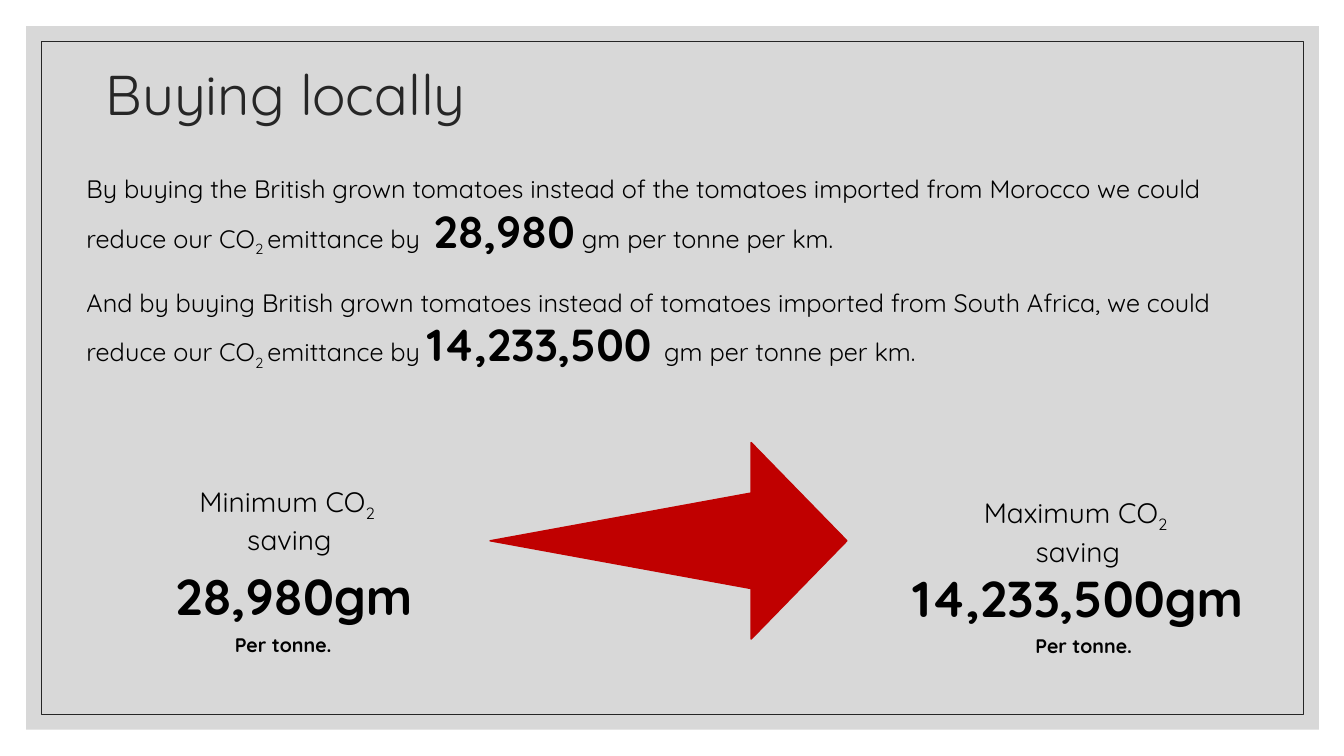
from lxml import etree
from pptx import Presentation
from pptx.dml.color import RGBColor
from pptx.enum.shapes import MSO_SHAPE as SHAPE
from pptx.enum.text import MSO_ANCHOR as ANCHOR, MSO_AUTO_SIZE as AUTO, PP_ALIGN as ALIGN
from pptx.oxml.ns import qn
from pptx.util import Pt

PX = 9144  # 100 px to the inch
FONT = "Quicksand"
GREY = RGBColor(0xBF, 0xBF, 0xBF)
DARK = RGBColor(0x26, 0x26, 0x26)
BLACK = RGBColor(0, 0, 0)
RED = RGBColor(0xC0, 0, 0)


def box(*lengths):
    return [n * PX for n in lengths]


def add_run(p, text, size, bold=False, sub=False, color=BLACK):
    r = p.add_run()
    r.text = text
    r.font.name = FONT
    r.font.size = Pt(size)
    r.font.bold = bold
    r.font.color.rgb = color
    if sub:
        r.font._element.set("baseline", "-25000")


def add_text(slide, place, paragraphs, align=ALIGN.LEFT, gap=0):
    """Each paragraph is a list of runs: text, size, bold, subscript."""
    tf = slide.shapes.add_textbox(*box(*place)).text_frame
    tf.word_wrap = True
    tf.auto_size = AUTO.SHAPE_TO_FIT_TEXT
    for i, runs in enumerate(paragraphs):
        p = tf.add_paragraph() if i else tf.paragraphs[0]
        p.alignment = align
        if i:
            p.space_before = Pt(gap)
        for run in runs:
            add_run(p, *run)


def add_shape(slide, kind, place, fill=None, line=None, width=1, rotation=0):
    s = slide.shapes.add_shape(kind, *box(*place))
    s.shadow.inherit = False
    s.rotation = rotation
    if fill is None:
        s.fill.background()
    else:
        s.fill.solid()
        s.fill.fore_color.rgb = fill
    if line is None:
        s.line.fill.background()
    else:
        s.line.color.rgb = line
        s.line.width = Pt(width)
    return s


def add_frame(slide):
    panel = add_shape(slide, SHAPE.RECTANGLE, (26, 26, 1282, 698), fill=GREY)
    color = panel._element.spPr.find(qn("a:solidFill"))[0]
    etree.SubElement(color, qn("a:alpha")).set("val", "60000")
    border = add_shape(slide, SHAPE.RECTANGLE, (41, 41, 1252, 668), line=DARK, width=0.5)
    # Send both behind the title
    tree = slide.shapes._spTree
    tree.insert(2, panel._element)
    tree.insert(3, border._element)


def set_title(slide, text):
    title = slide.shapes.title
    title.left, title.top, title.width, title.height = box(95, 22, 1100, 150)
    tf = title.text_frame
    tf.auto_size = AUTO.NONE
    tf.vertical_anchor = ANCHOR.MIDDLE
    p = tf.paragraphs[0]
    p.alignment = ALIGN.LEFT
    p.line_spacing = 0.9
    add_run(p, text, 40, color=DARK)


def add_saving(slide, label, label_at, amount, amount_at, unit_at):
    heading = [[(f"{label} CO", 20), ("2 ", 20, False, True)], [("saving", 20)]]
    add_text(slide, label_at, heading, ALIGN.CENTER)
    add_text(slide, amount_at, [[(amount, 36, True)]], ALIGN.CENTER)
    add_text(slide, unit_at, [[("Per tonne.", 14, True)]], ALIGN.CENTER)


def reduction(opening, before, amount, after):
    return [(f"{opening} we could reduce our CO", 18), ("2 ", 18, False, True),
            (before, 18), (amount, 32, True), (after, 18)]


def main():
    prs = Presentation()
    prs.slide_width, prs.slide_height = box(1333, 750)
    slide = prs.slides.add_slide(prs.slide_layouts[5])
    add_frame(slide)
    set_title(slide, "Buying locally")

    # Explanation
    add_text(slide, (76, 167, 1180, 239), [
        reduction("By buying the British grown tomatoes instead of the tomatoes "
                  "imported from Morocco",
                  "emittance by  ", "28,980", " gm per tonne per km."),
        reduction("And by buying British grown tomatoes instead of tomatoes "
                  "imported from South Africa,",
                  "emittance by ", "14,233,500 ", "gm per tonne per km."),
    ], gap=21)

    # Arrow: a long tail and a wide head
    for place, rotation in (((570, 404, 97, 265), 270), ((695, 489, 195, 95), 90)):
        add_shape(slide, SHAPE.ISOSCELES_TRIANGLE, place, RED, RED, rotation=rotation)

    # Savings at either end of the arrow
    add_saving(slide, "Minimum", (169, 476, 236, 77),
               "28,980gm", (127, 556, 329, 71), (163, 623, 236, 34))
    add_saving(slide, "Maximum", (951, 487, 236, 77),
               "14,233,500gm", (856, 558, 426, 71), (957, 624, 236, 34))

    prs.save("out.pptx")


if __name__ == "__main__":
    main()
